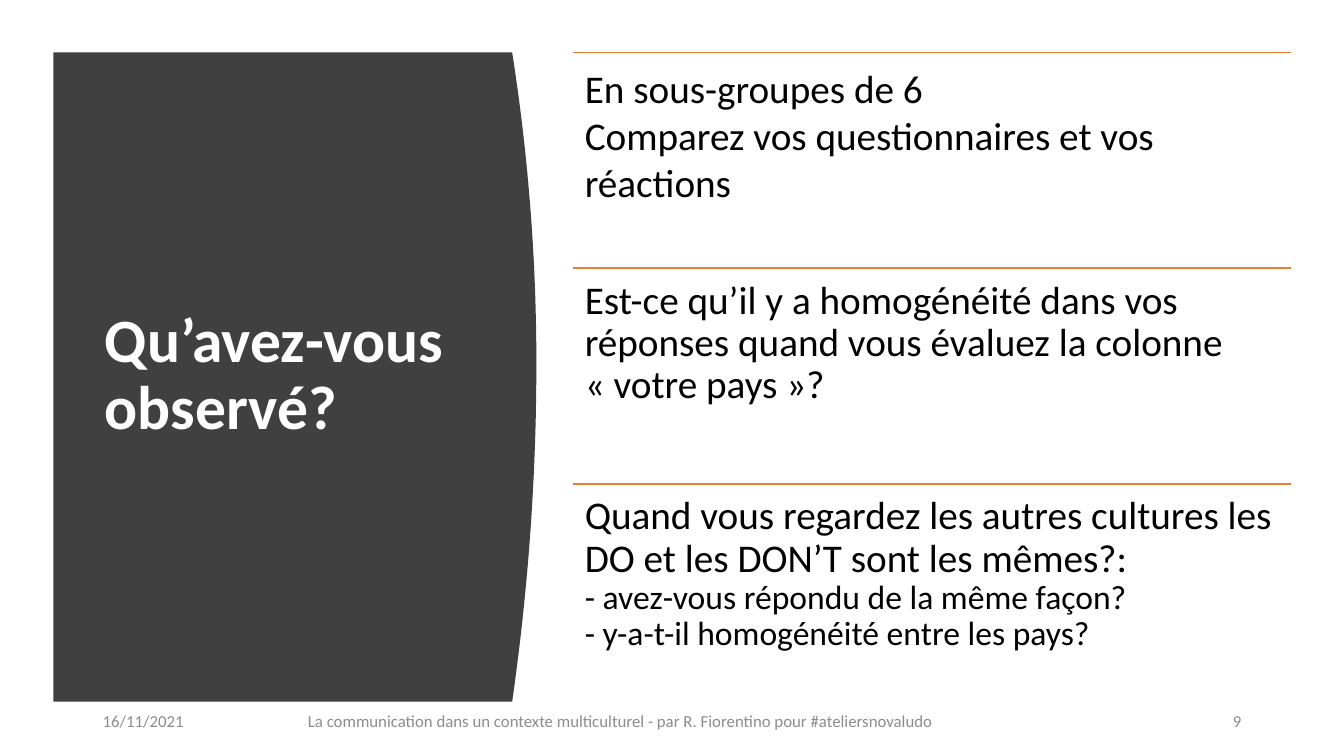
from lxml import etree
from pptx import Presentation
from pptx.dml.color import RGBColor
from pptx.enum.shapes import MSO_CONNECTOR
from pptx.enum.text import MSO_ANCHOR as ANCHOR, MSO_AUTO_SIZE as AUTO, PP_ALIGN as ALIGN
from pptx.oxml.ns import qn
from pptx.util import Pt

PX = 9144  # 100 px to the inch
FONT = "Calibri"
COLORS = {"panel": "404040", "title": "FFFFFF", "rule": "ED7D31",
          "text": "000000", "footer": "8C8C8C"}
NBSP = chr(160)  # no-break space, keeps the guillemets with their words

TITLE = "Qu’avez-vous observé?"
# Each question: line spacing, then lines as (text, size)
QUESTIONS = [
    (1.0, [("En sous-groupes de 6", 28),
           ("Comparez vos questionnaires et vos réactions", 28)]),
    (0.9, [("Est-ce qu’il y a homogénéité dans vos réponses quand vous "
            f"évaluez la colonne «{NBSP}votre pays{NBSP}»?", 28)]),
    (0.9, [("Quand vous regardez les autres cultures les DO et les DON’T "
            "sont les mêmes?:", 28),
           ("- avez-vous répondu de la même façon?", 24),
           ("- y-a-t-il homogénéité entre les pays?", 24)]),
]
# Footer parts: text, left, width, alignment
FOOTER = [
    ("16/11/2021", 0, 104, ALIGN.LEFT),
    ("La communication dans un contexte multiculturel - par R. Fiorentino "
     "pour #ateliersnovaludo", 126, 795, ALIGN.CENTER),
    ("9", 935, 214, ALIGN.RIGHT),
]


def px(*values):
    return [round(v * PX) for v in values]


def rgb(name):
    return RGBColor.from_string(COLORS[name])


def style(font, size, color, bold=False):
    font.name, font.size, font.bold = FONT, Pt(size), bold
    font.color.rgb = rgb(color)


def add_text_box(slide, x, y, w, h):
    tf = slide.shapes.add_textbox(*px(x, y, w, h)).text_frame
    tf.word_wrap = True
    return tf


def add_title_panel(slide, x, y, w, h):
    # Dark panel whose right edge bulges outwards
    bulge, peak, steps = 24, 308, 48
    edge = []
    for i in range(steps + 1):
        dy = h * i / steps - peak
        t = dy / (peak if dy < 0 else h - peak)
        edge.append(tuple(px(x + w - bulge * t * t, y + peak + dy)))
    builder = slide.shapes.build_freeform(*px(x, y), scale=1.0)
    builder.add_line_segments(edge + [tuple(px(x, y + h))], close=True)
    sp = builder.convert_to_shape()
    sp.shadow.inherit = False
    sp.fill.solid()
    sp.fill.fore_color.rgb = rgb("panel")
    sp.line.fill.background()

    # Title, brought in front of the panel
    title = slide.shapes.title
    sp._element.addnext(title._element)
    title.left, title.top, title.width, title.height = px(x + 41, y + 59, 374, 524)
    tf = title.text_frame
    tf.text = TITLE
    tf.word_wrap, tf.auto_size = True, AUTO.NONE
    tf.vertical_anchor = ANCHOR.MIDDLE
    p = tf.paragraphs[0]
    p.alignment, p.line_spacing = ALIGN.LEFT, 0.9
    style(p.font, 44, "title", bold=True)


def add_question(slide, x, y, w, h, spacing, lines):
    # Rule above the question
    rule = slide.shapes.add_connector(MSO_CONNECTOR.STRAIGHT, *px(x, y, x + w, y))
    rule.line.color.rgb = rgb("rule")
    rule.line.width = Pt(1)
    etree.SubElement(rule._element.spPr, qn("a:effectLst"))

    # Text
    tf = add_text_box(slide, x, y, w, h)
    tf.margin_left, tf.margin_top, tf.margin_right, tf.margin_bottom = px(12, 12, 12, 12)
    p = tf.paragraphs[0]
    p.line_spacing = spacing
    style(p.font, lines[0][1], "text")
    for i, (text, size) in enumerate(lines):
        if i:
            p.add_line_break()
        r = p.add_run()
        r.text = text
        style(r.font, size, "text")


def add_questions(slide, x, y, w, h):
    row = h / len(QUESTIONS)
    for i, (spacing, lines) in enumerate(QUESTIONS):
        add_question(slide, x, y + i * row, w, row, spacing, lines)


def add_footer(slide, x, y, h):
    for text, left, width, align in FOOTER:
        tf = add_text_box(slide, x + left, y, width, h)
        tf.vertical_anchor = ANCHOR.MIDDLE
        p = tf.paragraphs[0]
        p.text, p.alignment = text, align
        style(p.font, 12, "footer")


def main():
    prs = Presentation()
    prs.slide_width, prs.slide_height = px(1333, 750)
    slide = prs.slides.add_slide(prs.slide_layouts[5])  # Title Only
    add_title_panel(slide, 53, 52, 479, 644)
    add_questions(slide, 568, 52, 712, 642)
    add_footer(slide, 92, 695, 40)
    prs.save("out.pptx")


if __name__ == "__main__":
    main()
